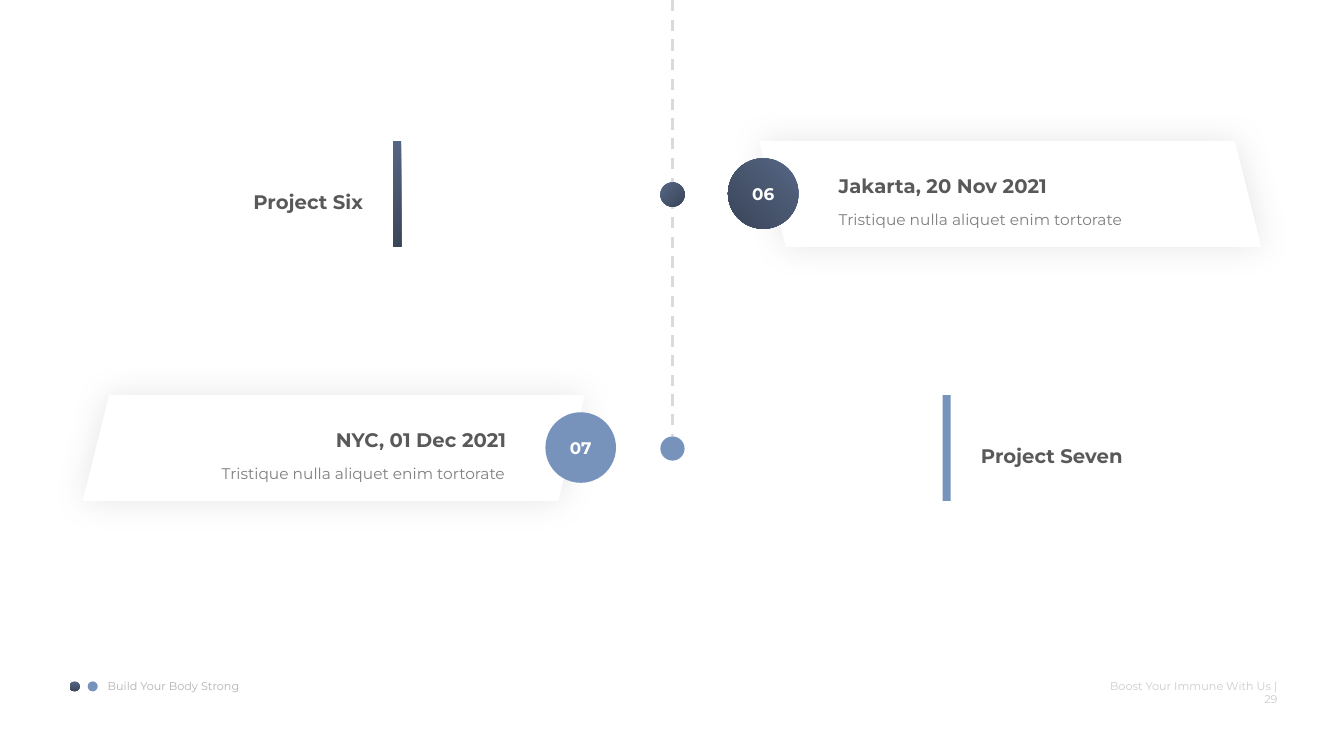
from dataclasses import dataclass

from lxml.etree import SubElement
from pptx import Presentation
from pptx.dml.color import RGBColor
from pptx.enum.dml import MSO_LINE
from pptx.enum.shapes import MSO_CONNECTOR, MSO_SHAPE
from pptx.enum.text import MSO_ANCHOR, MSO_AUTO_SIZE, PP_ALIGN
from pptx.oxml.ns import qn
from pptx.shapes.autoshape import Shape
from pptx.shapes.connector import Connector
from pptx.slide import Slide
from pptx.util import Pt

PX = 9144  # 100 px to the inch
FONT = "Montserrat"
WHITE = RGBColor(0xFF, 0xFF, 0xFF)
BLUE = RGBColor(0x77, 0x93, 0xBB)
NAVY_LIGHT = RGBColor(0x56, 0x66, 0x84)
NAVY_DARK = RGBColor(0x3A, 0x45, 0x58)
HEADING = RGBColor(0x59, 0x59, 0x59)
DETAIL = RGBColor(0x7F, 0x7F, 0x7F)
FOOTER_LEFT = RGBColor(0xB2, 0xB2, 0xB2)
FOOTER_RIGHT = RGBColor(0xCC, 0xCC, 0xCC)
DASHES = RGBColor(0xDA, 0xDA, 0xDA)
AXIS_X = 667
DOT = 24


@dataclass(frozen=True)
class Fill:
    """A plain colour, or a gradient towards `end` at a clockwise angle."""
    start: RGBColor
    end: RGBColor | None = None
    angle: int = 45


@dataclass(frozen=True)
class TextStyle:
    size: int
    color: RGBColor
    bold: bool = False
    spacing: float = 1.0


@dataclass(frozen=True)
class Project:
    number: str
    name: str
    date: str
    top: int
    card_left: int
    badge_left: int
    bar_left: int
    name_left: int
    date_left: int
    detail_left: int
    fill: Fill
    badge_fill: Fill
    card_on_right: bool


NAVY = Fill(NAVY_LIGHT, NAVY_DARK)
PLAIN_BLUE = Fill(BLUE)
TITLE_STYLE = TextStyle(14, HEADING, True, 1.5)
DETAIL_STYLE = TextStyle(11, DETAIL, False, 1.5)
BADGE_STYLE = TextStyle(12, WHITE, True)

PROJECTS = [
    Project("06", "Project Six", "Jakarta, 20 Nov 2021", 140, 753, 722, 390,
            189, 822, 822, NAVY, Fill(NAVY_LIGHT, NAVY_DARK, 135), True),
    Project("07", "Project Seven", "NYC, 01 Dec 2021", 392, 82, 541, 935,
            963, 237, 186, PLAIN_BLUE, PLAIN_BLUE, False),
]


def add_figure(slide: Slide, kind: MSO_SHAPE, left: int, top: int,
               width: int, height: int, fill: Fill) -> Shape:
    figure = slide.shapes.add_shape(
        kind, left * PX, top * PX, width * PX, height * PX)
    figure.shadow.inherit = False
    figure.line.fill.background()
    if fill.end is None:
        figure.fill.solid()
        figure.fill.fore_color.rgb = fill.start
    else:
        figure.fill.gradient()
        figure.fill.gradient_angle = 360 - fill.angle
        for stop, color, position in zip(
                figure.fill.gradient_stops, (fill.start, fill.end), (0, 1)):
            stop.color.rgb = color
            stop.position = position
    return figure


def write(shape: Shape, text: str, style: TextStyle, align: PP_ALIGN) -> None:
    paragraph = shape.text_frame.paragraphs[0]
    paragraph.alignment = align
    paragraph.line_spacing = style.spacing
    run = paragraph.add_run()
    run.text = text
    formats = {"name": FONT, "size": Pt(style.size), "bold": style.bold}
    for attribute, value in formats.items():
        setattr(run.font, attribute, value)
    run.font.color.rgb = style.color


def add_label(slide: Slide, left: int, top: int, width: int, height: int,
              text: str, style: TextStyle, align: PP_ALIGN,
              wrap: bool = True) -> None:
    label = slide.shapes.add_textbox(
        left * PX, top * PX, width * PX, height * PX)
    label.text_frame.word_wrap = wrap
    label.text_frame.auto_size = MSO_AUTO_SIZE.SHAPE_TO_FIT_TEXT
    write(label, text, style, align)


def add_glow(card: Shape) -> None:
    """Give the card a soft, centred shadow."""
    effects = card._element.spPr.find(qn("a:effectLst"))
    glow = SubElement(effects, qn("a:outerShdw"), blurRad=str(Pt(25)),
                      dist="0", algn="ctr", rotWithShape="0")
    black = SubElement(glow, qn("a:srgbClr"), val="000000")
    SubElement(black, qn("a:alpha"), val="10000")


def add_timeline(slide: Slide) -> Connector:
    timeline = slide.shapes.add_connector(
        MSO_CONNECTOR.STRAIGHT, AXIS_X * PX, 0, AXIS_X * PX, 433 * PX)
    timeline.line.color.rgb = DASHES
    timeline.line.width = Pt(2)
    timeline.line.dash_style = MSO_LINE.DASH
    SubElement(timeline._element.spPr, qn("a:effectLst"))
    return timeline


def add_project(slide: Slide, project: Project) -> Shape:
    """Draw one row and return its dot on the timeline."""
    top = project.top
    card_align, name_align = PP_ALIGN.RIGHT, PP_ALIGN.LEFT
    if project.card_on_right:
        card_align, name_align = name_align, card_align

    # Card with its numbered badge
    card = add_figure(slide, MSO_SHAPE.PARALLELOGRAM, project.card_left, top,
                      498, 105, Fill(WHITE))
    add_glow(card)
    if project.card_on_right:
        card._element.spPr.find(qn("a:xfrm")).set("flipH", "1")
    badge = add_figure(slide, MSO_SHAPE.OVAL, project.badge_left, top + 17,
                       70, 70, project.badge_fill)
    badge.text_frame.vertical_anchor = MSO_ANCHOR.MIDDLE
    write(badge, project.number, BADGE_STYLE, PP_ALIGN.CENTER)
    add_label(slide, project.date_left, top + 16, 275, 41,
              project.date, TITLE_STYLE, card_align)
    add_label(slide, project.detail_left, top + 54, 325, 35,
              "Tristique nulla aliquet enim tortorate",
              DETAIL_STYLE, card_align)

    # Name beside its bar
    add_figure(slide, MSO_SHAPE.RECTANGLE, project.bar_left, top, 8, 105,
               project.fill)
    add_label(slide, project.name_left, top + 32, 181, 41,
              project.name, TITLE_STYLE, name_align)

    return add_figure(slide, MSO_SHAPE.OVAL, AXIS_X - DOT // 2, top + 41,
                      DOT, DOT, project.fill)


def add_footer(slide: Slide) -> None:
    dot_fills = (Fill(NAVY_LIGHT, NAVY_DARK, 90), PLAIN_BLUE)
    for index, fill in enumerate(dot_fills):
        add_figure(slide, MSO_SHAPE.OVAL, 69 + 18 * index, 676, 10, 10, fill)
    add_label(slide, 97, 669, 152, 24, "Build Your Body Strong",
              TextStyle(8, FOOTER_LEFT), PP_ALIGN.LEFT, wrap=False)
    add_label(slide, 1080, 669, 197, 24, "Boost Your Immune With Us | 29",
              TextStyle(8, FOOTER_RIGHT), PP_ALIGN.RIGHT)


def main() -> None:
    deck = Presentation()
    deck.slide_width, deck.slide_height = 1333 * PX, 750 * PX
    slide = deck.slides.add_slide(deck.slide_layouts[6])
    add_footer(slide)
    timeline = add_timeline(slide)
    dots = [add_project(slide, project) for project in PROJECTS]
    timeline.end_connect(dots[-1], 0)
    deck.save("out.pptx")


if __name__ == "__main__":
    main()
